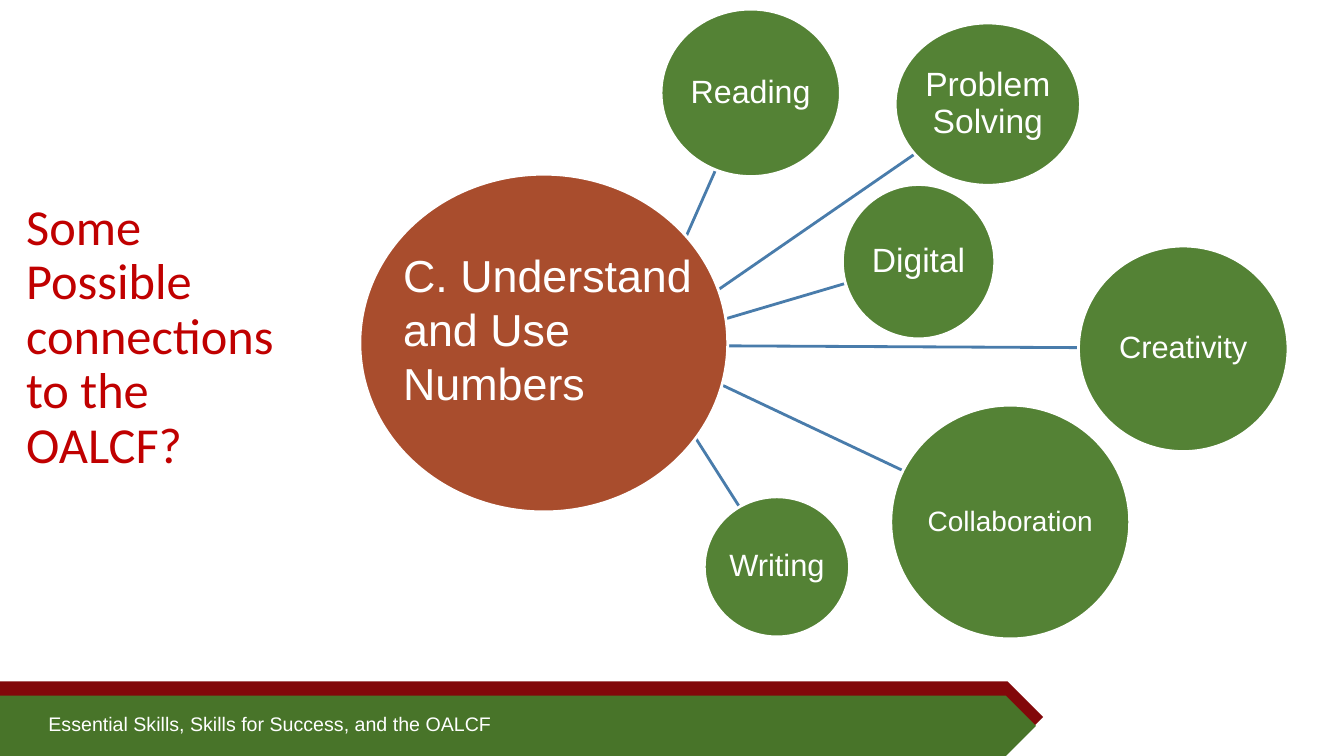
"""Build a slide linking a numeracy competency to related skills."""
from lxml import etree
from pptx import Presentation
from pptx.dml.color import RGBColor
from pptx.enum.shapes import MSO_CONNECTOR, MSO_SHAPE
from pptx.enum.text import MSO_ANCHOR, PP_ALIGN
from pptx.oxml.ns import qn
from pptx.util import Cm, Pt

OVAL, PLATE = MSO_SHAPE.OVAL, MSO_SHAPE.PENTAGON
STRAIGHT = MSO_CONNECTOR.STRAIGHT
TOP, MIDDLE = MSO_ANCHOR.TOP, MSO_ANCHOR.MIDDLE
LEFT, CENTER = PP_ALIGN.LEFT, PP_ALIGN.CENTER

HUES = {"white": "FFFFFF", "title": "C00000", "hub": "A94D2D", "skill": "548235",
        "link": "497CAB", "edge": "82080A", "band": "487429"}

SKILLS = [
    ("Writing", 22, (17.75, 12.52, 3.66, 3.53), (16.92, 10.08, 18.64, 12.78)),
    ("Collaboration", 20, (22.45, 10.21, 6.02, 5.89), (17.45, 9.35, 22.76, 11.86)),
    ("Creativity", 22, (27.18, 6.2, 5.28, 5.18), (17.45, 8.71, 27.18, 8.76)),
    ("Digital", 24, (21.23, 4.65, 3.84, 3.89), (17.45, 8.28, 21.31, 7.14)),
    ("Problem Solving", 24, (22.56, 0.58, 4.67, 4.09), (17.45, 7.75, 23.04, 3.89)),
    ("Reading", 23, (16.66, 0.23, 4.52, 4.22), (16.69, 7.32, 18.03, 4.29)),
]


def hue(name):
    """Return the named colour."""
    return RGBColor.from_string(HUES[name])


def write(frame, text, size, font="Arial", tone="white", align=LEFT,
          anchor=TOP, pad=(0.25, 0.13), lead=None):
    """Fill a text frame with one styled run."""
    frame.word_wrap = True
    frame.vertical_anchor = anchor
    frame.margin_left = frame.margin_right = Cm(pad[0])
    frame.margin_top = frame.margin_bottom = Cm(pad[1])
    para = frame.paragraphs[0]
    para.alignment = align
    if lead:
        para.line_spacing = lead
    run = para.add_run()
    run.text = text
    run.font.size = Pt(size)
    run.font.name = font
    run.font.color.rgb = hue(tone)


def label(slide, box, text, size, **style):
    """Add a text box."""
    area = slide.shapes.add_textbox(*map(Cm, box))
    write(area.text_frame, text, size, **style)


def solid(slide, kind, box, tone, rim=False):
    """Add a filled shape, with a white rim if asked."""
    shape = slide.shapes.add_shape(kind, *map(Cm, box))
    shape.shadow.inherit = False
    shape.fill.solid()
    shape.fill.fore_color.rgb = hue(tone)
    if rim:
        shape.line.color.rgb = hue("white")
        shape.line.width = Pt(2)
    else:
        shape.line.fill.background()
    return shape


def link(slide, ends):
    """Add a line from the hub to a skill."""
    line = slide.shapes.add_connector(STRAIGHT, *map(Cm, ends))
    line.line.color.rgb = hue("link")
    line.line.width = Pt(2)
    etree.SubElement(line._element.spPr, qn("a:effectLst"))


def footer(slide, box):
    """Draw the arrow band and its caption."""
    x, y, w, h = box
    solid(slide, PLATE, (x, y, w, h - 0.08), "edge")
    solid(slide, PLATE, (x, y + 0.36, w - 0.18, h - 0.36), "band")
    label(slide, (x + 0.97, y + 0.64, w - 2.74, 0.86),
          "Essential Skills, Skills for Success, and the OALCF", 14)


def hub(slide, box):
    """Draw the central circle and its wording."""
    x, y, w, h = box
    solid(slide, OVAL, box, "hub", rim=True)
    label(slide, (x + 0.84, y + 1.73, w - 0.84, h / 2),
          "C. Understand and Use Numbers", 32)


def skill(slide, box, text, size):
    """Draw one skill circle with its name."""
    shape = solid(slide, OVAL, box, "skill", rim=True)
    write(shape.text_frame, text, size, align=CENTER, anchor=MIDDLE,
          pad=(0.03, 0.03), lead=0.9)


def main():
    """Compose and save the slide."""
    deck = Presentation()
    deck.slide_width, deck.slide_height = Cm(33.87), Cm(19.05)
    slide = deck.slides.add_slide(deck.slide_layouts[6])
    footer(slide, (0, 17.17, 26.29, 1.88))
    label(slide, (0.41, 1.75, 7.57, 13.54),
          "Some Possible connections to the OALCF?", 36,
          font="Calibri", tone="title", anchor=MIDDLE, lead=0.9)
    for *_, ends in SKILLS:
        link(slide, ends)
    hub(slide, (9.07, 4.39, 9.27, 8.51))
    for text, size, box, _ in SKILLS:
        skill(slide, box, text, size)
    deck.save("out.pptx")


if __name__ == "__main__":
    main()
